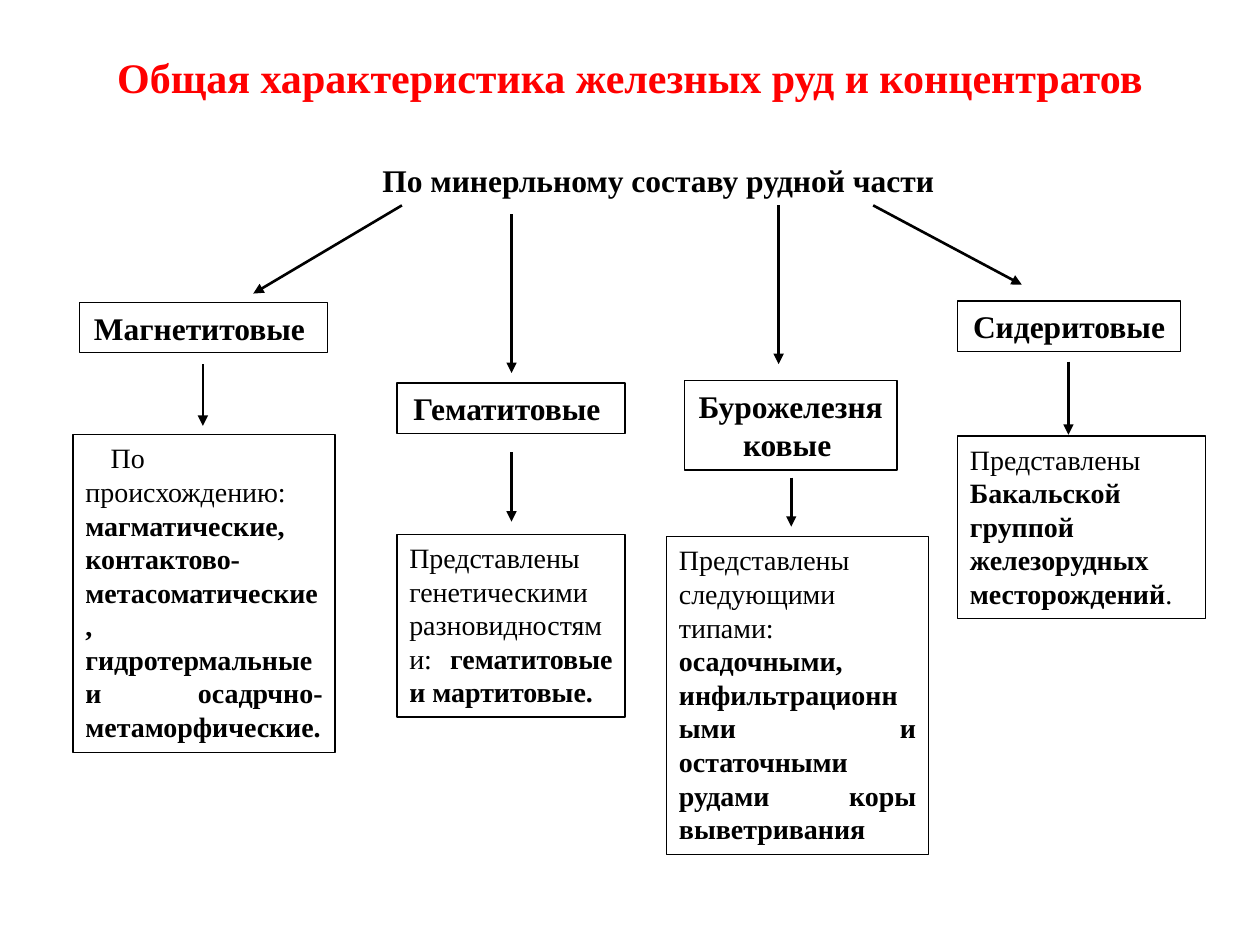
from pptx import Presentation
from pptx.dml.color import RGBColor
from pptx.enum.shapes import MSO_CONNECTOR, MSO_SHAPE
from pptx.enum.text import MSO_ANCHOR, PP_ALIGN
from pptx.oxml.ns import qn
from pptx.util import Inches, Pt
from lxml.etree import SubElement

COLORS = {"title": "FF0000", "ink": "000000"}
FONT = "Times New Roman"


class OreSlide:
    """Style and drawing methods for the current slide."""

    def __init__(self, page):
        self.page = page

    def color(self, name):
        return RGBColor.from_string(COLORS[name])

    def add_text(self, shape, spans, align, anchor=MSO_ANCHOR.TOP, color="ink", indent=0):
        """Add one paragraph of (text, size, bold) spans."""
        frame = shape.text_frame
        frame.word_wrap = True
        frame.vertical_anchor = anchor
        para = frame.paragraphs[0]
        para.alignment = align
        if indent:
            para._p.get_or_add_pPr().set("indent", str(Inches(indent)))
        for text, size, bold in spans:
            span = para.add_run()
            span.text = text
            span.font.name = FONT
            span.font.size = Pt(size)
            span.font.bold = bold
            span.font.color.rgb = self.color(color)

    def label(self, place, text, size, **style):
        shape = self.page.shapes.add_textbox(*map(Inches, place))
        self.add_text(shape, [(text, size, True)], PP_ALIGN.CENTER, **style)

    def box(self, place, spans, align, **style):
        shape = self.page.shapes.add_shape(MSO_SHAPE.RECTANGLE, *map(Inches, place))
        shape.shadow.inherit = False
        shape.fill.background()
        shape.line.color.rgb = self.color("ink")
        shape.line.width = Pt(0.75)
        self.add_text(shape, spans, align, **style)

    def arrow(self, start, end):
        line = self.page.shapes.add_connector(
            MSO_CONNECTOR.STRAIGHT, *map(Inches, start + end))
        line.line.color.rgb = self.color("ink")
        line.line.width = Pt(1.5)
        properties = line._element.spPr
        SubElement(properties.find(qn("a:ln")), qn("a:tailEnd"), type="triangle")
        SubElement(properties, qn("a:effectLst"))


# Ore types: (box place, heading spans)
ORE_TYPES = [
    ((0.63, 2.4, 1.97, 0.4), [("Магнетитовые ", 18, True)]),
    ((3.15, 3.04, 1.81, 0.4), [("Гематитовые ", 18, True)]),
    ((5.43, 3.02, 1.69, 0.71), [("Бурожелезняковые", 18, True), (" ", 16, True)]),
    ((7.6, 2.39, 1.77, 0.4), [("Сидеритовые ", 18, True)]),
]

# Descriptions: (box place, first-line indent, spans)
DESCRIPTIONS = [
    ((0.58, 3.45, 2.08, 2.52), 0.2, [
        ("По происхождению: ", 16, False),
        ("магматические, контактово-метасоматические, гидротермальные "
         "и осадрчно-метаморфические.", 16, True)]),
    ((3.15, 4.24, 1.81, 1.45), 0, [
        ("Представлены генетическими разновидностями: ", 16, False),
        ("гематитовые и мартитовые.", 16, True)]),
    ((5.29, 4.26, 2.08, 2.52), 0, [
        ("Представлены следующими типами: ", 16, False),
        ("осадочными, инфильтрационными и остаточными рудами "
         "коры выветривания", 16, True)]),
    ((7.6, 3.46, 1.97, 1.45), 0, [
        ("Представлены ", 16, False),
        ("Бакальской группой железорудных месторождений", 16, True),
        (".", 16, False)]),
]

ARROWS = [
    # Subtitle to ore types
    ((3.19, 1.63), (2.01, 2.33)),
    ((4.06, 1.7), (4.06, 2.96)),
    ((6.18, 1.63), (6.18, 2.89)),
    ((6.93, 1.63), (8.11, 2.26)),
    # Ore types to descriptions
    ((1.61, 2.89), (1.61, 3.38)),
    ((4.06, 3.59), (4.06, 4.14)),
    ((6.28, 3.79), (6.28, 4.18)),
    ((8.48, 2.87), (8.48, 3.45)),
]


def main():
    deck = Presentation()
    deck.slide_width, deck.slide_height = Inches(10), Inches(7.5)
    slide = OreSlide(deck.slides.add_slide(deck.slide_layouts[6]))

    # Title and subtitle
    slide.label((0.5, 0.3, 9, 0.61), "Общая характеристика железных руд и концентратов",
                24, anchor=MSO_ANCHOR.MIDDLE, color="title")
    slide.label((2.4, 1.23, 5.65, 0.4), "По минерльному составу рудной части", 18)

    # Classification boxes
    for place, spans in ORE_TYPES:
        slide.box(place, spans, PP_ALIGN.CENTER)
    for place, indent, spans in DESCRIPTIONS:
        slide.box(place, spans, PP_ALIGN.JUSTIFY, indent=indent)

    # Arrows
    for start, end in ARROWS:
        slide.arrow(start, end)

    deck.save("out.pptx")


if __name__ == "__main__":
    main()
